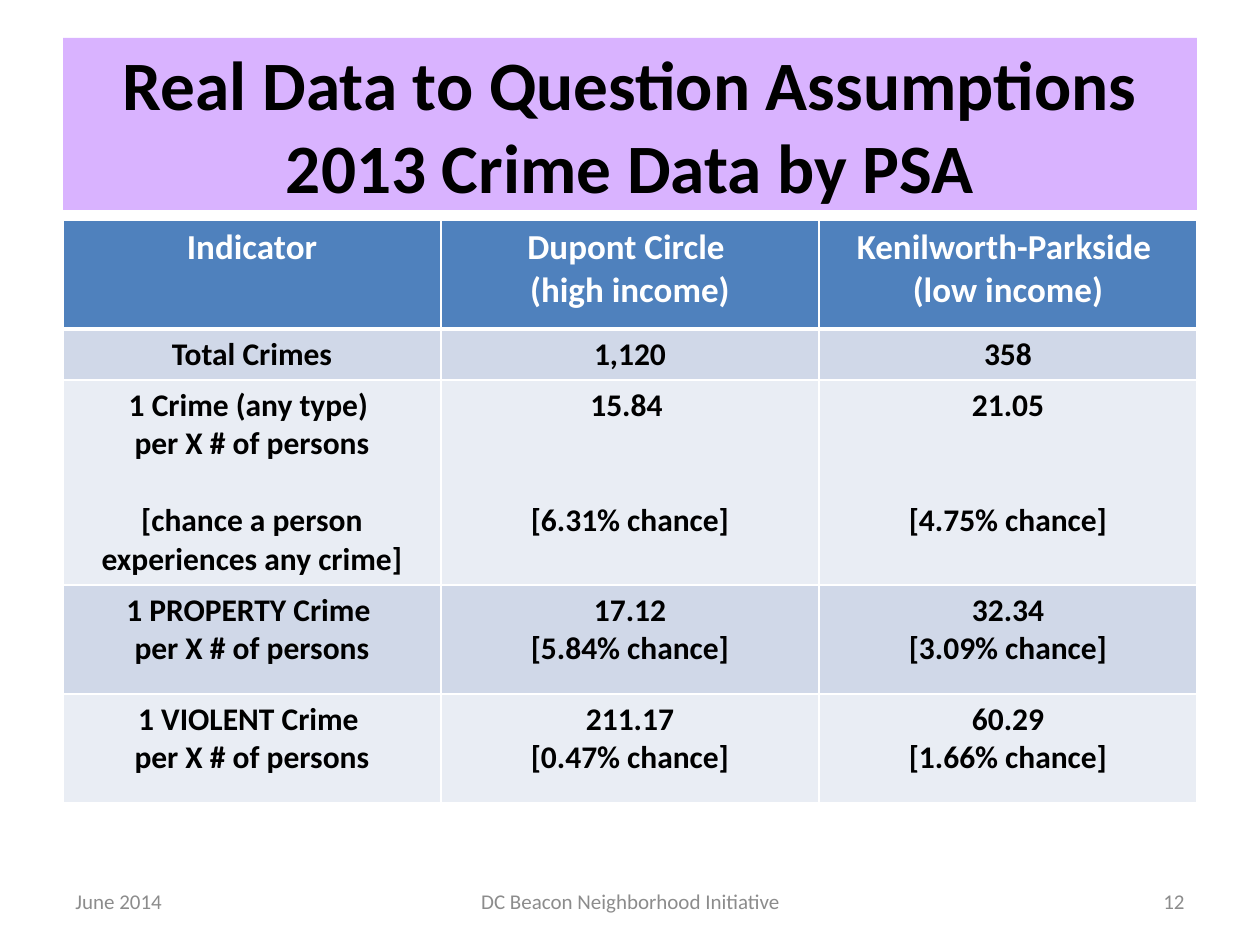
from copy import deepcopy
from typing import NamedTuple

from pptx import Presentation, util as u
from pptx.dml.color import RGBColor
from pptx.enum import text as t
from pptx.oxml import ns, xmlchemy

PX = 914400 / 126
FONT = "Calibri"
COLORS = {
    "title": "D9B3FF", "header": "4F81BD", "band_dark": "D0D8E8",
    "band_light": "E9EDF4", "white": "FFFFFF", "black": "000000", "grey": "8C8C8C",
}
LEFT, CENTER, RIGHT = t.PP_ALIGN.LEFT, t.PP_ALIGN.CENTER, t.PP_ALIGN.RIGHT
BODY_LINE = 22  # points taken by one line of 18 pt text


class Row(NamedTuple):
    height: int
    fill: str
    cells: tuple[str, str, str]
    gap_lines: tuple[int, int, int] = (0, 0, 0)  # space above each cell's last paragraph


class Footer(NamedTuple):
    left: int
    width: int
    align: t.PP_ALIGN
    words: str


ROWS = [
    Row(109, "header", ("Indicator", "Dupont Circle \n(high income)",
                        "Kenilworth-Parkside \n(low income)")),
    Row(51, "band_dark", ("Total Crimes", "1,120", "358")),
    Row(205, "band_light",
        ("1 Crime (any type) \nper X # of persons\n[chance a person experiences any crime]",
         "15.84 \n[6.31% chance]", "21.05\n[4.75% chance]"), (1, 2, 2)),
    Row(109, "band_dark", ("1 PROPERTY Crime \nper X # of persons",
                           "17.12\n[5.84% chance]", "32.34\n[3.09% chance]")),
    Row(109, "band_light", ("1 VIOLENT Crime \nper X # of persons",
                            "211.17\n[0.47% chance]", "60.29\n[1.66% chance]")),
]
FOOTERS = [
    Footer(63, 294, LEFT, "June 2014"),
    Footer(431, 399, CENTER, "DC Beacon Neighborhood Initiative"),
    Footer(903, 294, RIGHT, "12"),
]


def px(length: int) -> int:
    return round(length * PX)


def color(name: str) -> RGBColor:
    return RGBColor.from_string(COLORS[name])


def write(frame, words: str, *, size: float, ink: str, bold: bool = False,
          align=CENTER, last_gap: int = 0) -> None:
    """Newlines part paragraphs; vertical tabs break lines within one."""
    frame.word_wrap = True
    frame.text = words
    for paragraph in frame.paragraphs:
        paragraph.alignment = align
        for run in paragraph.runs:
            font = run.font
            font.name, font.size, font.bold = FONT, u.Pt(size), bold
            font.color.rgb = color(ink)
        for line_break in paragraph._p.findall(ns.qn("a:br")):
            line_break.append(deepcopy(paragraph.runs[0]._r.rPr))
    if last_gap:
        frame.paragraphs[-1].space_before = u.Pt(last_gap)


def set_borders(cell, bottom: int) -> None:
    properties = cell._tc.get_or_add_tcPr()
    widths = {"lnL": 1, "lnR": 1, "lnT": 1, "lnB": bottom}
    for position, (side, width) in enumerate(widths.items()):
        line = xmlchemy.OxmlElement(f"a:{side}")
        line.set("w", str(u.Pt(width)))
        fill = xmlchemy.OxmlElement("a:solidFill")
        shade = xmlchemy.OxmlElement("a:srgbClr")
        shade.set("val", COLORS["white"])
        fill.append(shade)
        line.append(fill)
        properties.insert(position, line)


def add_title(slide) -> None:
    title = slide.shapes.title
    title.left, title.top, title.width, title.height = map(px, (63, 38, 1134, 172))
    title.fill.solid()
    title.fill.fore_color.rgb = color("title")
    title.text_frame.vertical_anchor = t.MSO_ANCHOR.MIDDLE
    title.text_frame.auto_size = t.MSO_AUTO_SIZE.NONE
    write(title.text_frame, "Real Data to Question Assumptions\v2013 Crime Data by PSA",
          size=39.6, ink="black", bold=True)


def add_crime_table(slide, rows: list[Row]) -> None:
    height = sum(row.height for row in rows)
    table = slide.shapes.add_table(len(rows), 3, px(63), px(220), px(1134), px(height)).table
    for r, row in enumerate(rows):
        table.rows[r].height = px(row.height)
        header = r == 0
        for c, (words, gap) in enumerate(zip(row.cells, row.gap_lines)):
            cell = table.cell(r, c)
            cell.fill.solid()
            cell.fill.fore_color.rgb = color(row.fill)
            set_borders(cell, bottom=3 if header else 1)
            if r == 1:
                cell._tc.tcPr.find(ns.qn("a:lnT")).set("w", str(u.Pt(3)))
            write(cell.text_frame, words, size=20 if header else 18,
                  ink="white" if header else "black", bold=True, last_gap=gap * BODY_LINE)


def add_footer(slide, footer: Footer) -> None:
    box = slide.shapes.add_textbox(px(footer.left), px(876), px(footer.width), px(50))
    box.text_frame.vertical_anchor = t.MSO_ANCHOR.MIDDLE
    write(box.text_frame, footer.words, size=12, ink="grey", align=footer.align)


def main() -> None:
    deck = Presentation()
    deck.slide_width, deck.slide_height = px(1260), px(945)
    slide = deck.slides.add_slide(deck.slide_layouts.get_by_name("Title Only"))
    add_title(slide)
    for footer in FOOTERS:
        add_footer(slide, footer)
    add_crime_table(slide, ROWS)
    deck.save("out.pptx")


if __name__ == "__main__":
    main()
